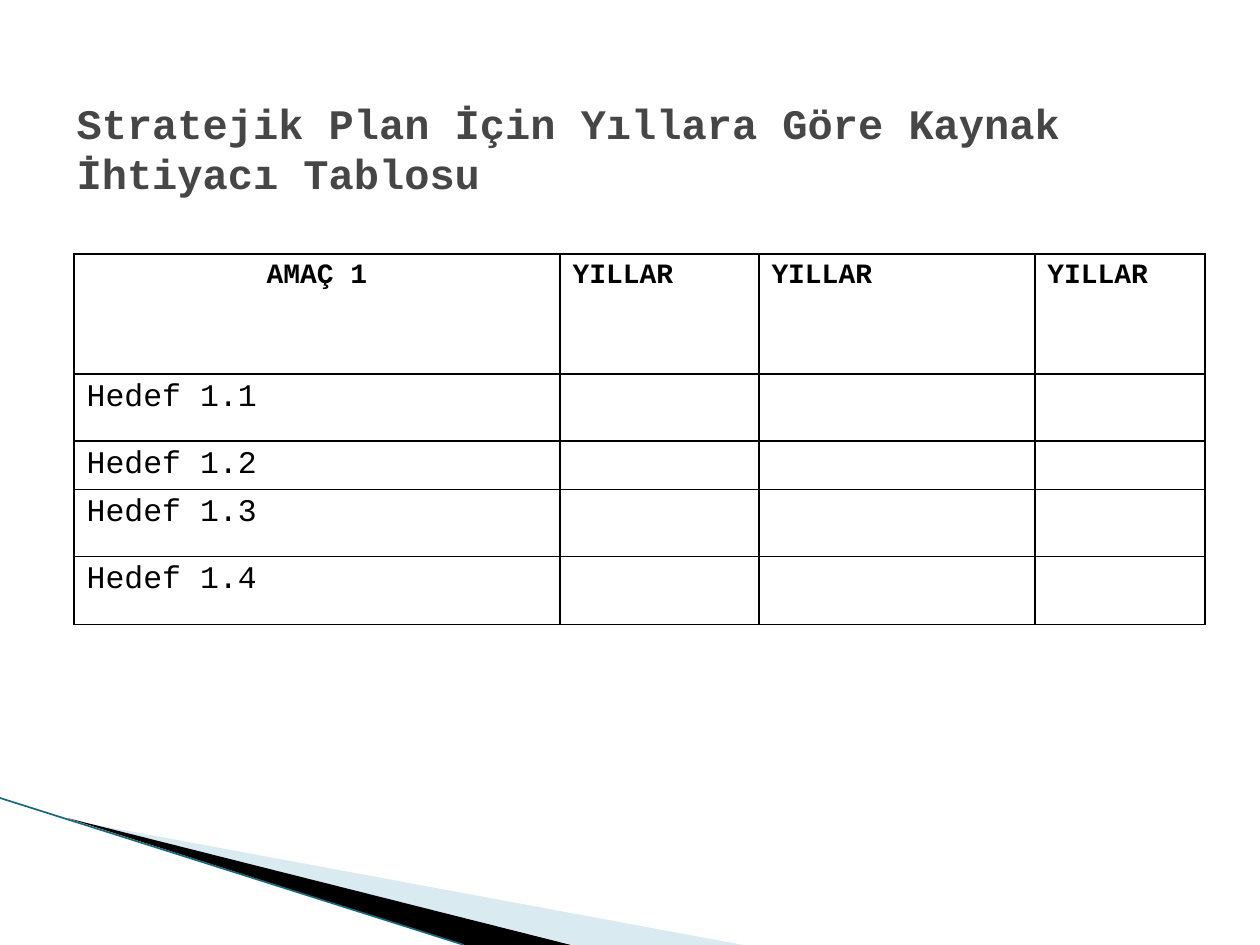
from itertools import pairwise

from lxml.etree import SubElement
from pptx import Presentation
from pptx.dml.color import RGBColor
from pptx.enum.shapes import MSO_CONNECTOR
from pptx.enum.text import MSO_ANCHOR, PP_ALIGN
from pptx.oxml.ns import qn
from pptx.util import Pt

PX = 914400 // 126
FONT = "Courier New"
COLUMN_EDGES = [74, 560, 759, 1035, 1205]
ROW_EDGES = [254, 374, 441, 489, 556, 624]
HEADERS = ["AMAÇ 1", "YILLAR", "YILLAR", "YILLAR"]
GOALS = ["Hedef 1.1", "Hedef 1.2", "Hedef 1.3", "Hedef 1.4"]


def px(length):
    return length * PX


def rgb(code):
    return RGBColor.from_string(code)


def write(frame, text, size, color="000000", bold=False, align=PP_ALIGN.LEFT):
    paragraph = frame.paragraphs[0]
    paragraph.alignment = align
    run = paragraph.add_run()
    run.text = text
    run.font.name = FONT
    run.font.size = Pt(size)
    run.font.bold = bold
    run.font.color.rgb = rgb(color)


def add_wedge(slide, points, color, opacity=100):
    start, *others = [(px(x), px(y)) for x, y in points]
    builder = slide.shapes.build_freeform(*start)
    builder.add_line_segments(others, close=True)
    wedge = builder.convert_to_shape()
    wedge.shadow.inherit = False
    wedge.line.fill.background()
    wedge.fill.solid()
    wedge.fill.fore_color.rgb = rgb(color)
    if opacity < 100:
        fill_color = wedge.fill._xPr.find(qn("a:solidFill"))[0]
        SubElement(fill_color, qn("a:alpha"), val=str(opacity * 1000))


def add_line(slide, start, end, color, width):
    ends = [px(value) for value in (*start, *end)]
    line = slide.shapes.add_connector(MSO_CONNECTOR.STRAIGHT, *ends)
    line.line.color.rgb = rgb(color)
    line.line.width = Pt(width)
    SubElement(line._element.spPr, qn("a:effectLst"))


def add_title(slide, text):
    title = slide.shapes.title
    title.left, title.top, title.width, title.height = map(px, (64, 69, 1150, 158))
    title.text_frame.word_wrap = True
    title.text_frame.vertical_anchor = MSO_ANCHOR.MIDDLE
    write(title.text_frame, text, size=24, color="464646", bold=True)


def style_cell(cell, border_color="000000"):
    """Clear the fill and draw a thin border on all four sides."""
    properties = cell._tc.get_or_add_tcPr()
    for side in ("lnL", "lnR", "lnT", "lnB"):
        border = SubElement(properties, qn(f"a:{side}"), w=str(Pt(1)))
        fill = SubElement(border, qn("a:solidFill"))
        SubElement(fill, qn("a:srgbClr"), val=border_color)
    cell.fill.background()


def add_resource_table(slide):
    left, right = COLUMN_EDGES[0], COLUMN_EDGES[-1]
    top, bottom = ROW_EDGES[0], ROW_EDGES[-1]
    table = slide.shapes.add_table(
        len(GOALS) + 1, len(HEADERS),
        px(left), px(top), px(right - left), px(bottom - top)).table
    table.first_row = table.horz_banding = False
    for column, (start, end) in zip(table.columns, pairwise(COLUMN_EDGES)):
        column.width = px(end - start)
    for row, (start, end) in zip(table.rows, pairwise(ROW_EDGES)):
        row.height = px(end - start)
    for cell in table.iter_cells():
        style_cell(cell)

    for index, header in enumerate(HEADERS):
        align = PP_ALIGN.LEFT if index else PP_ALIGN.CENTER
        write(table.cell(0, index).text_frame, header, size=16, bold=True, align=align)
    for row, goal in enumerate(GOALS, start=1):
        write(table.cell(row, 0).text_frame, goal, size=18)
        for column in range(1, len(HEADERS)):
            blank = table.cell(row, column)
            blank.margin_top = blank.margin_bottom = 0


def main():
    presentation = Presentation()
    presentation.slide_width, presentation.slide_height = px(1260), px(945)
    slide = presentation.slides.add_slide(presentation.slide_layouts[5])
    add_wedge(slide, [(69, 820), (743, 945), (574, 945)], "A0CBDC", opacity=40)
    add_wedge(slide, [(67, 818), (571, 945), (464, 945)], "000000")
    add_line(slide, (0, 798), (464, 945), "16697A", 0.95)
    add_title(slide, "Stratejik Plan İçin Yıllara Göre Kaynak İhtiyacı Tablosu")
    add_resource_table(slide)
    presentation.save("out.pptx")


if __name__ == "__main__":
    main()
